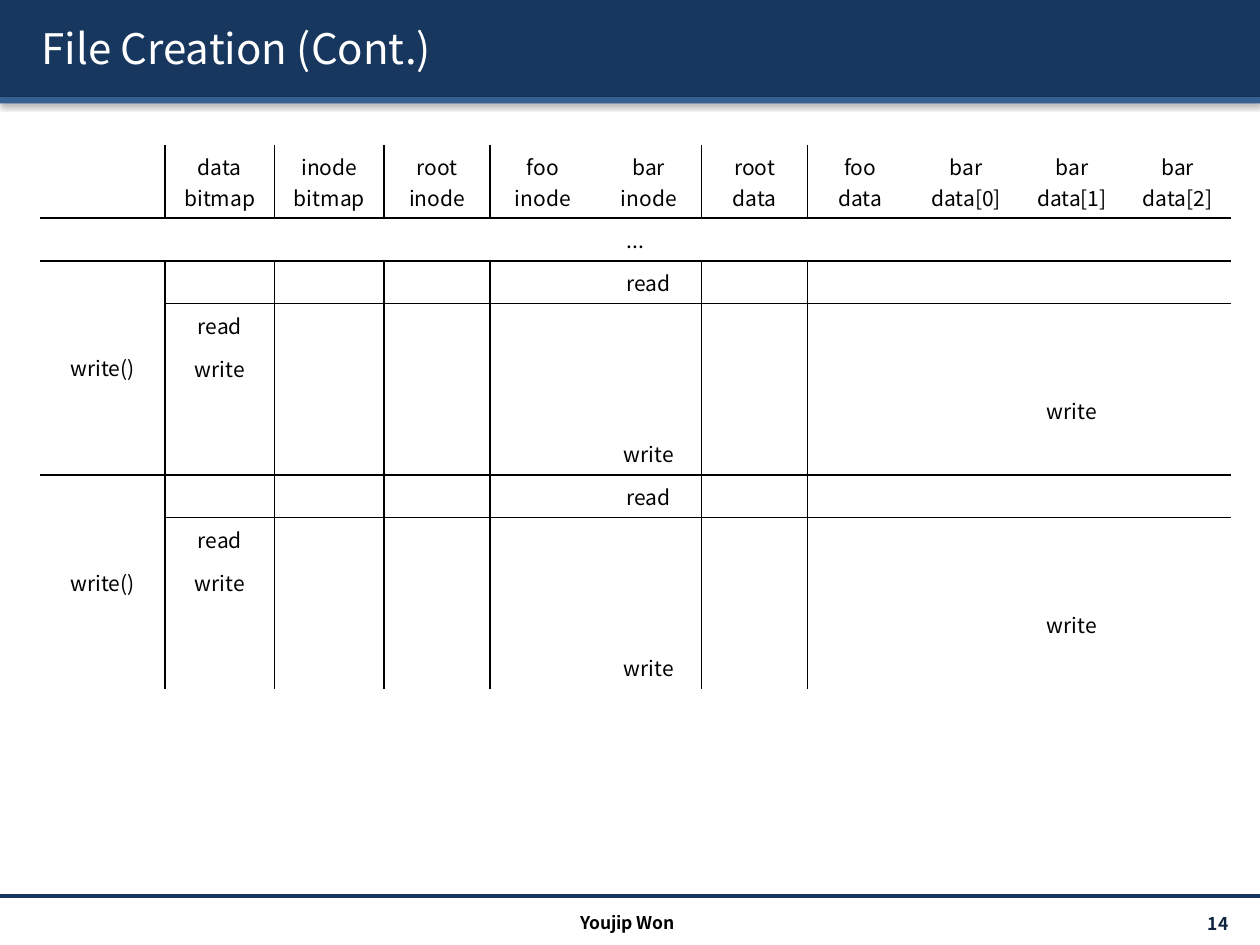
from dataclasses import dataclass

import pptx
import pptx.dml.color
import pptx.enum.shapes
import pptx.enum.text
import pptx.oxml
import pptx.oxml.ns
import pptx.util

Inches = pptx.util.Inches
Pt = pptx.util.Pt
Align = pptx.enum.text.PP_ALIGN
RGB = pptx.dml.color.RGBColor.from_string


@dataclass(frozen=True)
class Theme:
    font: str = "Noto Sans CJK KR"
    navy: str = "17375E"
    blue: str = "376092"
    page: str = "0F243E"
    white: str = "FFFFFF"
    black: str = "000000"
    title_size: int = 24
    table_size: int = 12
    footer_size: int = 10


THEME = Theme()


@dataclass(frozen=True)
class Band:
    top: float
    height: float
    color: str


@dataclass(frozen=True)
class Label:
    text: str
    box: tuple[float, float, float, float]
    size: int
    color: str
    align: Align
    bold: bool = False
    shadow: bool = False


BANDS = [Band(0, 0.77, THEME.navy), Band(0.77, 0.05, THEME.blue)]
LABELS = [
    Label("File Creation (Cont.)", (0.23, 0.06, 9.61, 0.64), THEME.title_size,
          THEME.white, Align.LEFT, shadow=True),
    Label("14 ", (8.71, 7.21, 1.17, 0.24), THEME.footer_size, THEME.page, Align.RIGHT, bold=True),
    Label("Youjip Won", (3.32, 7.2, 3.32, 0.24), THEME.footer_size, THEME.black,
          Align.CENTER, bold=True),
]

# Table content: row 0 is the header, row 1 the ellipsis, then one block per call
HEADERS = ["", "data\nbitmap", "inode\nbitmap", "root\ninode", "foo\ninode", "bar\ninode",
           "root\ndata", "foo\ndata", "bar\ndata[0]", "bar\ndata[1]", "bar\ndata[2]"]
WRITE_STEPS = [(5, "read"), (1, "read"), (1, "write"), (9, "write"), (5, "write")]
BLOCK_STARTS = [2, 7]
ELLIPSIS_ROW = 1
COLUMN_WIDTHS = [0.99] + [0.87] * 2 + [0.84] * 8
ROW_HEIGHTS = [0.58] + [0.34] * 11
RULES_AFTER_COLUMN = {0, 2, 5}
RULES_AFTER_ROW = {0, 1, 6}
NO_STYLE_NO_GRID = "{2D5ABB26-0587-4C30-8999-92F81FD0307C}"


def effects(inner: str = ""):
    return pptx.oxml.parse_xml(
        f'<a:effectLst {pptx.oxml.ns.nsdecls("a")}>{inner}</a:effectLst>')


def shadow_effects(blur: float, distance: float, angle: int, alpha: int):
    return effects(
        f'<a:outerShdw blurRad="{Pt(blur)}" dist="{Pt(distance)}" dir="{angle * 60000}">'
        f'<a:srgbClr val="{THEME.black}"><a:alpha val="{alpha * 1000}"/></a:srgbClr>'
        '</a:outerShdw>')


def style_run(run, size: int, color: str, bold: bool = False) -> None:
    run.font.name = THEME.font
    run.font.size = Pt(size)
    run.font.bold = bold
    run.font.color.rgb = RGB(color)


def draw_band(slide, band: Band) -> None:
    bar = slide.shapes.add_shape(pptx.enum.shapes.MSO_SHAPE.RECTANGLE, Inches(0),
                                 Inches(band.top), Inches(10), Inches(band.height))
    bar.fill.solid()
    bar.fill.fore_color.rgb = RGB(band.color)
    bar.line.fill.background()
    bar._element.spPr.append(shadow_effects(3.1, 1.6, 90, 38))


def draw_footer_rule(slide) -> None:
    rule = slide.shapes.add_connector(pptx.enum.shapes.MSO_CONNECTOR.STRAIGHT,
                                      Inches(0), Inches(7.11), Inches(10), Inches(7.11))
    rule.line.color.rgb = RGB(THEME.navy)
    rule.line.width = Pt(2)
    rule._element.spPr.append(effects())


def draw_label(slide, label: Label) -> None:
    frame = slide.shapes.add_textbox(*map(Inches, label.box)).text_frame
    frame.word_wrap = True
    frame.vertical_anchor = pptx.enum.text.MSO_ANCHOR.MIDDLE
    frame.margin_top = frame.margin_bottom = 0
    frame.text = label.text
    paragraph = frame.paragraphs[0]
    paragraph.alignment = label.align
    run = paragraph.runs[0]
    style_run(run, label.size, label.color, label.bold)
    if label.shadow:
        fill = run.font._element.find(pptx.oxml.ns.qn("a:solidFill"))
        fill.addnext(shadow_effects(1, 2, 45, 100))


def fill_cell(cell, text: str, side_margin: float = 0.14) -> None:
    cell.fill.background()
    cell.vertical_anchor = pptx.enum.text.MSO_ANCHOR.MIDDLE
    cell.margin_left = cell.margin_right = Inches(side_margin)
    cell.margin_top = cell.margin_bottom = Inches(0.05)
    cell.text_frame.text = text
    for paragraph in cell.text_frame.paragraphs:
        paragraph.alignment = Align.CENTER
        for run in paragraph.runs:
            style_run(run, THEME.table_size, THEME.black)
        # Empty cells keep the small type size so that rows do not grow
        paragraph._p.append(pptx.oxml.parse_xml(
            f'<a:endParaRPr {pptx.oxml.ns.nsdecls("a")} sz="{THEME.table_size * 100}">'
            f'<a:latin typeface="{THEME.font}"/></a:endParaRPr>'))


def rule_cell(cell, row: int, column: int) -> None:
    last_row = row + (cell.span_height if cell.is_merge_origin else 1) - 1
    upright = row != ELLIPSIS_ROW
    sides = {
        "L": upright and column - 1 in RULES_AFTER_COLUMN,
        "R": upright and column in RULES_AFTER_COLUMN,
        "T": row - 1 in RULES_AFTER_ROW,
        "B": last_row in RULES_AFTER_ROW,
    }
    properties = cell._tc.get_or_add_tcPr()
    for index, side in enumerate(side for side, drawn in sides.items() if drawn):
        properties.insert(index, pptx.oxml.parse_xml(
            f'<a:ln{side} {pptx.oxml.ns.nsdecls("a")} w="{Pt(1)}"><a:solidFill>'
            f'<a:srgbClr val="{THEME.black}"/></a:solidFill></a:ln{side}>'))


def draw_access_table(slide) -> None:
    table = slide.shapes.add_table(
        len(ROW_HEIGHTS), len(COLUMN_WIDTHS), Inches(0.32), Inches(1.15),
        Inches(sum(COLUMN_WIDTHS)), Inches(sum(ROW_HEIGHTS))).table
    table.first_row = table.horz_banding = False
    table._tbl.tblPr.find(pptx.oxml.ns.qn("a:tableStyleId")).text = NO_STYLE_NO_GRID
    for column, width in zip(table.columns, COLUMN_WIDTHS):
        column.width = Inches(width)
    for row, height in zip(table.rows, ROW_HEIGHTS):
        row.height = Inches(height)

    # Wording by grid place
    words = {(0, column): header for column, header in enumerate(HEADERS)}
    words[ELLIPSIS_ROW, 0] = "..."
    table.cell(ELLIPSIS_ROW, 0).merge(table.cell(ELLIPSIS_ROW, len(COLUMN_WIDTHS) - 1))
    for start in BLOCK_STARTS:
        words[start, 0] = "write()"
        table.cell(start, 0).merge(table.cell(start + len(WRITE_STEPS) - 1, 0))
        for step, (column, access) in enumerate(WRITE_STEPS):
            words[start + step, column] = access

    for row in range(len(ROW_HEIGHTS)):
        for column in range(len(COLUMN_WIDTHS)):
            cell = table.cell(row, column)
            fill_cell(cell, words.get((row, column), ""), 0.12 if row == ELLIPSIS_ROW else 0.14)
            rule_cell(cell, row, column)


def main() -> None:
    deck = pptx.Presentation()
    deck.slide_width, deck.slide_height = Inches(10), Inches(7.5)
    slide = deck.slides.add_slide(deck.slide_layouts[6])
    # Header bands and footer rule
    for band in BANDS:
        draw_band(slide, band)
    draw_footer_rule(slide)
    # Title, page number and author
    for label in LABELS:
        draw_label(slide, label)
    draw_access_table(slide)
    deck.save("out.pptx")


if __name__ == "__main__":
    main()
